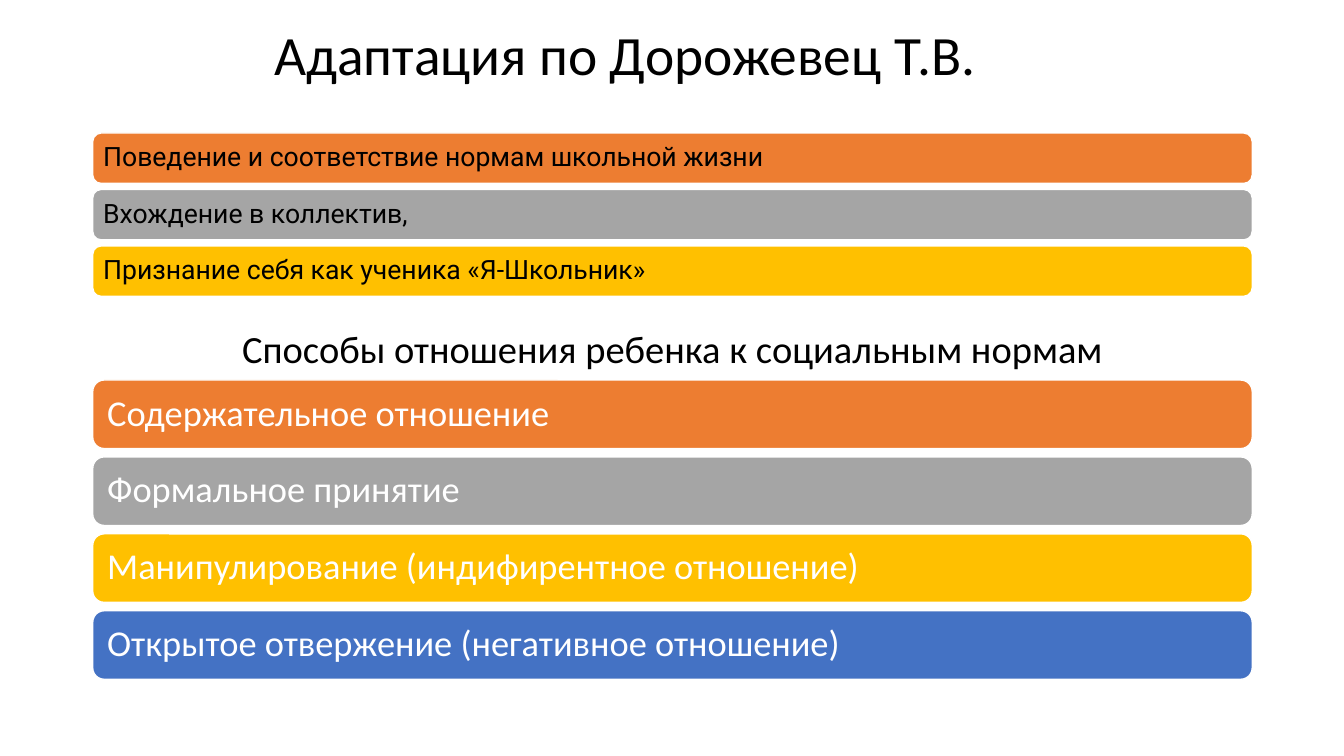
from pptx import Presentation
from pptx.dml.color import RGBColor
from pptx.enum import shapes, text
from pptx.util import Inches, Pt

LEFT, WIDTH = 0.92, 11.5
ORANGE, GRAY, GOLD, BLUE = "ED7D31", "A5A5A5", "FFC000", "4472C4"
BLACK, WHITE = "000000", "FFFFFF"
ADAPTATION = [
    ("Поведение и соответствие нормам школьной жизни", ORANGE),
    ("Вхождение в коллектив,", GRAY),
    ("Признание себя как ученика «Я-Школьник»", GOLD),
]
ATTITUDES = [
    ("Содержательное отношение", ORANGE),
    ("Формальное принятие", GRAY),
    ("Манипулирование (индифирентное отношение)", GOLD),
    ("Открытое отвержение (негативное отношение)", BLUE),
]


def rgb(value):
    return RGBColor.from_string(value)


def place(sp, left, top, width, height):
    sp.left, sp.top = Inches(left), Inches(top)
    sp.width, sp.height = Inches(width), Inches(height)


def write(sp, words, size, font="Calibri", color=BLACK,
          align=text.PP_ALIGN.LEFT, spacing=0.9):
    tf = sp.text_frame
    tf.word_wrap = True
    tf.auto_size = text.MSO_AUTO_SIZE.NONE
    tf.vertical_anchor = text.MSO_ANCHOR.MIDDLE
    p = tf.paragraphs[0]
    p.text = words
    p.alignment = align
    p.line_spacing = spacing
    p.font.size = Pt(size)
    p.font.name = font
    p.font.color.rgb = rgb(color)


def add_bars(s, items, top, step, height, inset, size, font, color):
    for i, (words, fill) in enumerate(items):
        sp = s.shapes.add_shape(
            shapes.MSO_SHAPE.ROUNDED_RECTANGLE, Inches(LEFT),
            Inches(top + i * step), Inches(WIDTH), Inches(height))
        sp.shadow.inherit = False
        sp.fill.solid()
        sp.fill.fore_color.rgb = rgb(fill)
        sp.line.color.rgb = rgb(WHITE)
        sp.line.width = Pt(1)
        tf = sp.text_frame
        tf.margin_left = tf.margin_right = Inches(inset)
        tf.margin_top = tf.margin_bottom = Inches(inset)
        write(sp, words, size, font, color)


def main():
    prs = Presentation()
    prs.slide_width, prs.slide_height = Inches(13.33), Inches(7.5)
    s = prs.slides.add_slide(prs.slide_layouts[5])

    title = s.shapes.title
    place(title, 2.62, 0.26, WIDTH, 0.62)
    write(title, "Адаптация по Дорожевец Т.В.", 39.6)

    add_bars(s, ADAPTATION, 1.32, 0.56, 0.5, 0.08, 19, "Roboto", BLACK)

    heading = s.shapes.add_textbox(
        Inches(LEFT), Inches(3.28), Inches(WIDTH), Inches(0.47))
    write(heading, "Способы отношения ребенка к социальным нормам", 27.5,
          align=text.PP_ALIGN.CENTER, spacing=0.7)

    add_bars(s, ATTITUDES, 3.77, 0.763, 0.68, 0.11, 26, "Calibri", WHITE)
    prs.save("out.pptx")


if __name__ == "__main__":
    main()
